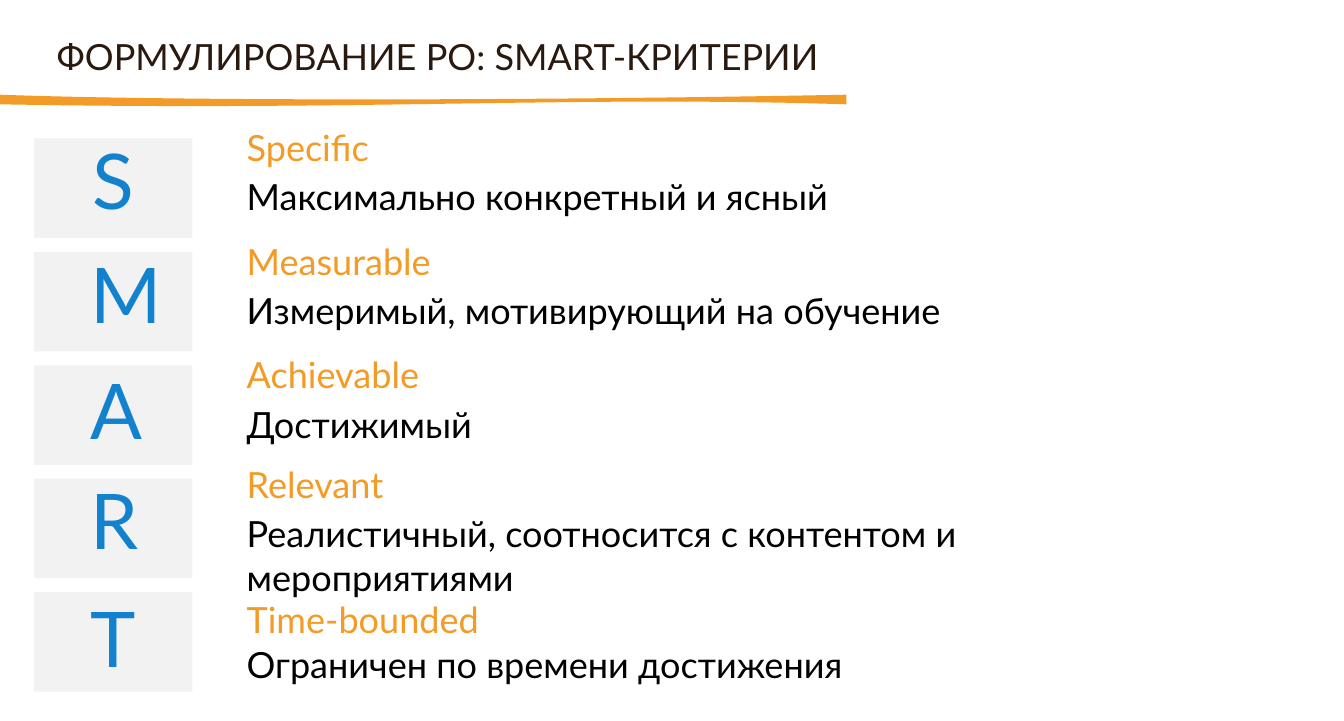
from pptx import Presentation
from pptx.dml.color import RGBColor
from pptx.enum.shapes import MSO_SHAPE as Shape
from pptx.enum.text import MSO_ANCHOR as Anchor, PP_ALIGN as Align
from pptx.util import Inches, Pt

GREY = RGBColor(0xF2, 0xF2, 0xF2)
ORANGE = RGBColor(0xF2, 0x9B, 0x26)
BLUE = RGBColor(0x12, 0x82, 0xCE)
BROWN = RGBColor(0x29, 0x19, 0x0F)
BLACK = RGBColor(0, 0, 0)

deck = Presentation()
deck.slide_width, deck.slide_height = Inches(27.95), Inches(15)
slide = deck.slides.add_slide(deck.slide_layouts[5])
shapes = slide.shapes


def write(text, box, color, size=54, align=Align.LEFT, anchor=Anchor.TOP,
          right=0.79, pad=0, item=None):
    left, top, width, height = [Inches(n) for n in box]
    if item is None:
        item = shapes.add_textbox(left, top, width, height)
    else:
        item.left, item.top, item.width, item.height = left, top, width, height
    frame = item.text_frame
    frame.word_wrap = True
    frame.vertical_anchor = anchor
    frame.margin_left, frame.margin_right = Inches(1.18), Inches(right)
    frame.margin_top = frame.margin_bottom = Inches(pad)
    para = frame.paragraphs[0]
    para.alignment = align
    run = para.add_run()
    run.text = text
    run.font.name = "Lato"
    run.font.size = Pt(size)
    run.font.color.rgb = color


def paint(shape, color):
    shape.shadow.inherit = False
    shape.fill.solid()
    shape.fill.fore_color.rgb = color
    shape.line.fill.background()


write("ФОРМУЛИРОВАНИЕ РО: SMART-КРИТЕРИИ", (0, 0.59, 23.55, 1.15), BROWN,
      anchor=Anchor.BOTTOM, right=0, pad=0.12, item=shapes.title)

curves = [
    ((17.6, 1.97), (10.89, 2.1), (3.5, 2.1), (0, 1.97)),
    ((0, 2.17), (7.62, 2.31), (11.82, 1.99), (17.6, 2.17)),
]
steps = 40
edge = []
for curve in curves:
    for step in range(steps + 1):
        t = step / steps
        parts = ((1 - t) ** 3, 3 * t * (1 - t) ** 2, 3 * t * t * (1 - t), t ** 3)
        edge.append([Inches(sum(p * n for p, n in zip(parts, axis)))
                     for axis in zip(*curve)])
pen = shapes.build_freeform(*edge[0])
pen.add_line_segments(edge[1:], close=True)
paint(pen.convert_to_shape(), ORANGE)

rows = [
    ("S", 2.77, "Specific", 2.61, "Максимально конкретный и ясный", 3.63),
    ("М", 5.13, "Measurable", 4.98, "Измеримый, мотивирующий на обучение", 6),
    ("А", 7.55, "Achievable", 7.34, "Достижимый", 8.37),
    ("R", 9.83, "Relevant", 9.63,
     "Реалистичный, соотносится с контентом и мероприятиями", 10.65),
    ("T", 12.29, "Time-bounded", 12.42, "Ограничен по времени достижения", 13.36),
]
for i, (mark, high, term, top, note, low) in enumerate(rows):
    tile = shapes.add_shape(Shape.RECTANGLE, Inches(0.71), Inches(2.88 + 2.36 * i),
                            Inches(3.29), Inches(2.07))
    paint(tile, GREY)
    write(mark, (0.71, high, 2.91, 2.19), BLUE, size=115, align=Align.CENTER)
    write(term, (3.95, top, 8.8, 1.16), ORANGE)
    write(note, (3.95, low, 22.27, 1.16), BLACK)

deck.save("out.pptx")
